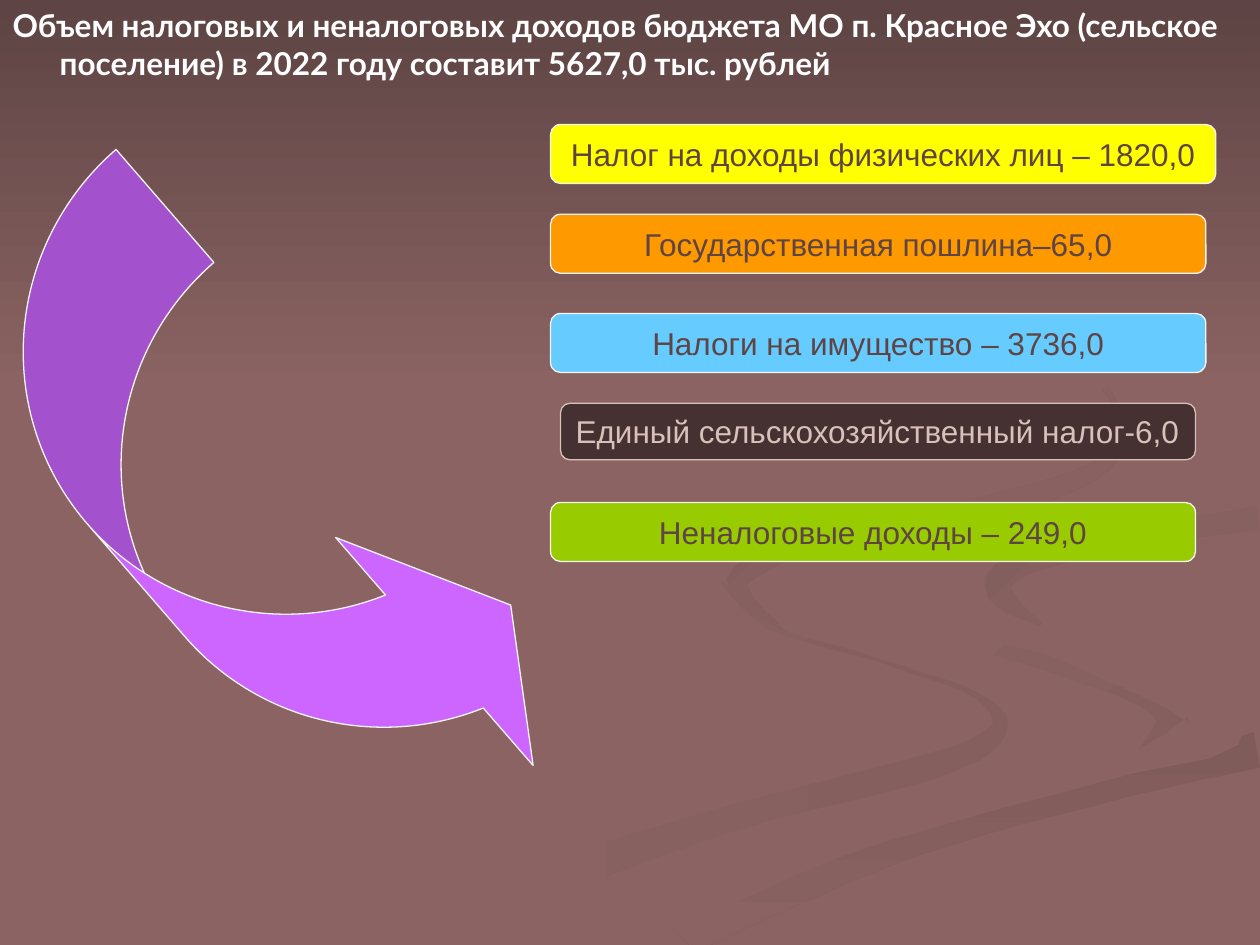
from math import hypot
from pptx import Presentation, util as u
from pptx.dml.color import RGBColor
from pptx.enum import shapes as sh, text as tx

BASE, DARK, PALE = "8A6362", "5E4444", "F7F3F3"
ALT = sh.MSO_SHAPE.FLOWCHART_ALTERNATE_PROCESS
ROUND = sh.MSO_SHAPE.ROUNDED_RECTANGLE
UNIT = u.Cm(2.54) / 100  # bands are drawn on a grid of 0.01 inch
STEPS = 5

# Winding bands: start colour, end colour, angle, knots (x, y, width)
BANDS = [
    (BASE, "845F5E", 0, [
        (573, 462, 2), (610, 497, 4), (697, 524, 3), (775, 552, 5), (792, 580, 14),
        (740, 608, 20), (579, 650, 21), (417, 705, 30), (330, 749, 30)]),
    (BASE, "845F5E", 45, [
        (724, 466, 2), (760, 504, 8), (840, 529, 13), (910, 553, 18),
        (930, 575, 26), (900, 603, 4)]),
    ("7F5B5A", BASE, 90, [
        (998, 595, 28), (864, 630, 20), (725, 670, 20), (599, 720, 25),
        (540, 749, 30)]),
    (BASE, BASE, 0, [
        (999, 395, 15), (850, 420, 16), (753, 464, 50), (840, 509, 25),
        (970, 565, 50), (870, 616, 10), (660, 675, 15), (490, 749, 25)]),
    ("825E5D", BASE, 45, [
        (998, 411, 18), (890, 428, 16), (810, 448, 20), (793, 470, 20),
        (826, 496, 2)]),
    ("805C5B", BASE, 45, [
        (762, 233, 1), (850, 281, 5), (891, 335, 4), (865, 376, 14),
        (760, 408, 18), (645, 430, 16), (585, 462, 16), (622, 500, 1)]),
]

# Income items: text, top, width (cm), fill
ITEMS = [
    ("Налог на доходы физических лиц – 1820,0", 2.51, 13.41, "FFFF00"),
    ("Государственная пошлина–65,0", 4.32, 13.21, "FF9900"),
    ("Налоги на имущество – 3736,0", 6.32, 13.21, "66CCFF"),
    ("Неналоговые доходы – 249,0", 10.13, 13, "99CC00"),
]
TITLE = ("Объем налоговых и неналоговых доходов бюджета МО п. Красное Эхо "
         "(сельское поселение) в 2022 году составит 5627,0 тыс. рублей")


def color(code):
    return RGBColor.from_string(code)


def paint(fill, code):
    fill.solid()
    fill.fore_color.rgb = color(code)


def blend(fill, first, last, angle):
    fill.gradient()
    fill.gradient_angle = (360 - angle) % 360
    for stop, code, pos in zip(fill.gradient_stops, (first, last), (0, 1)):
        stop.color.rgb = color(code)
        stop.position = pos


def style(run, face, code, bold=False):
    font = run.font
    font.name, font.size, font.bold = face, u.Pt(18), bold
    font.color.rgb = color(code)


def curve(knots):
    """Smooth the knots with a Catmull-Rom spline."""
    ends = [knots[0], *knots, knots[-1]]
    line = []
    for a, b, c, d in zip(ends, ends[1:], ends[2:], ends[3:]):
        for step in range(STEPS):
            t = step / STEPS
            line.append([q + t * (r - p + t * (2 * p - 5 * q + 4 * r - s
                         + t * (3 * (q - r) + s - p))) / 2
                         for p, q, r, s in zip(a, b, c, d)])
    return line + [knots[-1]]


def outline(knots):
    """Walk down one side of the band and back up the other."""
    line = curve(knots)
    near, far = [], []
    for i, (x, y, wide) in enumerate(line):
        prev, after = line[max(i - 1, 0)], line[min(i + 1, len(line) - 1)]
        dx, dy = after[0] - prev[0], after[1] - prev[1]
        half = wide / 2 / hypot(dx, dy)
        near.append((x - dy * half, y + dx * half))
        far.append((x + dy * half, y - dx * half))
    return [(min(x, 1000), min(y, 750)) for x, y in near + far[::-1]]


def add_band(slide, first, last, angle, knots):
    points = outline(knots)
    pen = slide.shapes.build_freeform(*points[0], scale=UNIT)
    pen.add_line_segments(points[1:], close=True)
    band = pen.convert_to_shape()
    band.shadow.inherit = False
    band.line.fill.background()
    if first == last:
        paint(band.fill, first)
    else:
        blend(band.fill, first, last, angle)


def add_form(slide, kind, box, code, edge=PALE):
    form = slide.shapes.add_shape(kind, *map(u.Cm, box))
    form.shadow.inherit = False
    paint(form.fill, code)
    form.line.color.rgb = color(edge)
    form.line.width = u.Pt(0.75)
    return form


def add_label(form, words, code, align, anchor):
    frame = form.text_frame
    frame.text = words
    frame.vertical_anchor = anchor
    para = frame.paragraphs[0]
    para.alignment = align
    style(para.runs[0], "Arial", code)
    return frame


def add_title(slide):
    title = slide.shapes.title
    title.left, title.top = u.Cm(0), u.Cm(0)
    title.width, title.height = u.Cm(25.1), u.Cm(16.92)
    frame = title.text_frame
    frame.text = TITLE
    frame.word_wrap = True
    frame.auto_size = tx.MSO_AUTO_SIZE.NONE
    frame.vertical_anchor = tx.MSO_ANCHOR.TOP
    para = frame.paragraphs[0]
    para.alignment = tx.PP_ALIGN.LEFT
    # Hanging indent
    props = para._p.get_or_add_pPr()
    props.set("marL", str(u.Cm(0.95)))
    props.set("indent", str(-u.Cm(0.95)))
    style(para.runs[0], "Lato", "FFFFFF", True)
    # Lift the title above the backdrop
    slide.shapes.element.append(title.element)


def main():
    deck = Presentation()
    deck.slide_width, deck.slide_height = u.Cm(25.4), u.Cm(19.05)
    slide = deck.slides.add_slide(deck.slide_layouts[5])

    # Backdrop
    paint(slide.background.fill, BASE)
    for band in BANDS:
        add_band(slide, *band)
    sky = add_form(slide, sh.MSO_SHAPE.RECTANGLE, (0, 0, 25.4, 7.82), BASE)
    blend(sky.fill, DARK, BASE, 90)
    sky.line.fill.background()

    add_title(slide)

    # Income items
    for words, top, wide, code in ITEMS:
        form = add_form(slide, ALT, (11.1, top, wide, 1.19), code)
        frame = add_label(form, words, DARK, tx.PP_ALIGN.CENTER, tx.MSO_ANCHOR.MIDDLE)
        frame.word_wrap = False

    # Curved arrow
    arrow = add_form(slide, sh.MSO_SHAPE.CURVED_RIGHT_ARROW,
                     (2.59, 2.92, 5.38, 15.19), "CC66FF")
    arrow.rotation = 319.1
    for i, value in enumerate((0.56, 1.13, 0.33)):
        arrow.adjustments[i] = value

    # Farm tax item
    farm = add_form(slide, ROUND, (11.3, 8.13, 12.8, 1.14), "453131", "D8C1BA")
    frame = add_label(farm, "Единый сельскохозяйственный налог-6,0", "D8C1BA",
                      tx.PP_ALIGN.LEFT, tx.MSO_ANCHOR.TOP)
    frame.word_wrap = True
    frame.auto_size = tx.MSO_AUTO_SIZE.SHAPE_TO_FIT_TEXT

    deck.save("out.pptx")


if __name__ == "__main__":
    main()
